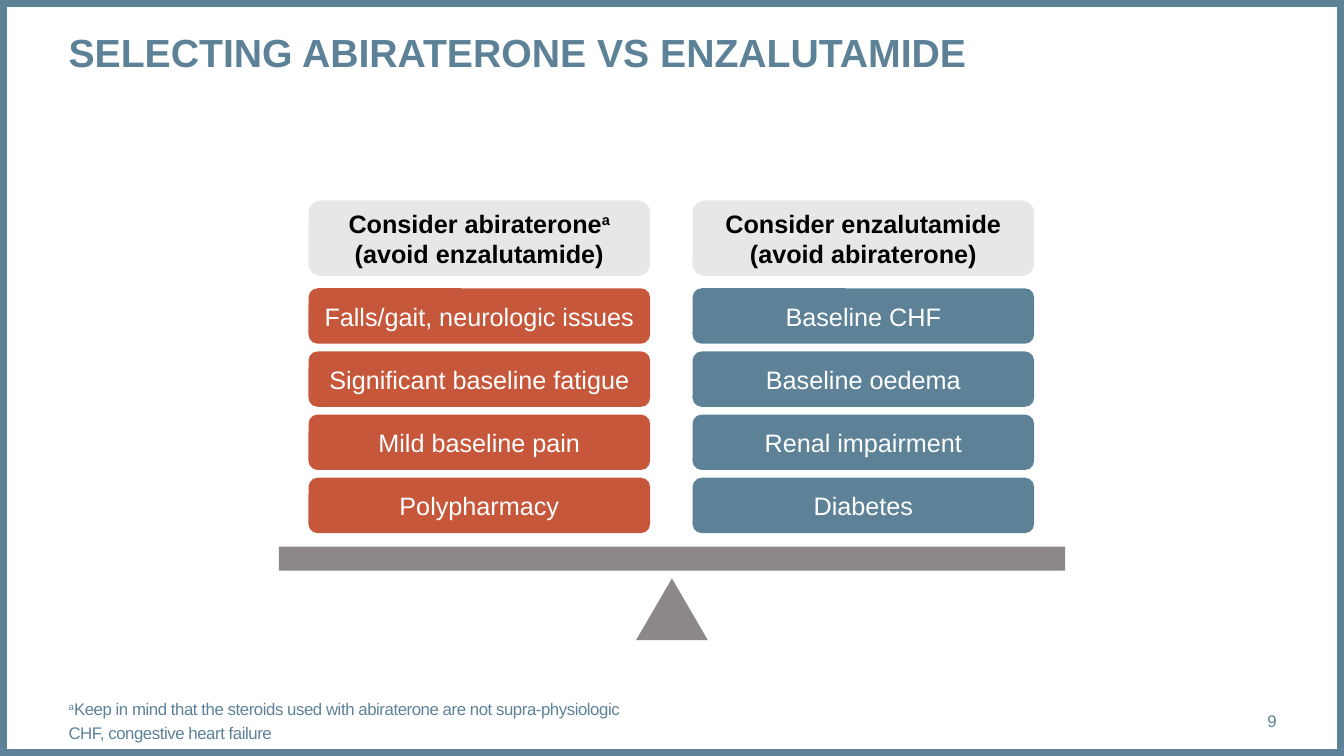
from pptx import Presentation
from pptx.dml.color import RGBColor
from pptx.enum.shapes import MSO_SHAPE as SHAPE
from pptx.enum.text import MSO_ANCHOR as ANCHOR, PP_ALIGN as ALIGN
from pptx.util import Pt

THEME = {
    "font": "Arial",
    "blue": RGBColor.from_string("5D8298"),
    "red": RGBColor.from_string("C6573B"),
    "grey": RGBColor.from_string("8B878B"),
    "pale": RGBColor.from_string("E8E7E8"),
    "white": RGBColor.from_string("FFFFFF"),
    "black": RGBColor.from_string("000000"),
    "title": 28,
    "body": 18,
    "small": 12,
}


def add_shape(kind, box, fill=None):
    sp = s.shapes.add_shape(kind, *map(Pt, box))
    sp.shadow.inherit = False
    sp.line.fill.background()
    if fill:
        sp.fill.solid()
        sp.fill.fore_color.rgb = THEME[fill]
    else:
        sp.fill.background()
    return sp


def write(sp, paragraphs, size, color, bold=False, align=ALIGN.LEFT,
          anchor=ANCHOR.MIDDLE, before=0, spacing=None):
    """Fill sp with text; ^ encloses a superscript and a newline breaks the line."""
    tf = sp.text_frame
    frame_format = {"word_wrap": True, "vertical_anchor": anchor, "margin_left": 0,
                    "margin_top": 0, "margin_right": 0, "margin_bottom": 0}
    for name, value in frame_format.items():
        setattr(tf, name, value)
    font_format = {"name": THEME["font"], "size": Pt(THEME[size]), "bold": bold}
    for i, text in enumerate(paragraphs):
        p = tf.add_paragraph() if i else tf.paragraphs[0]
        p.alignment = align
        p.space_before = Pt(before)
        for j, part in enumerate(text.split("^")):
            for k, line in enumerate(part.split("\n")):
                if k:
                    p.add_line_break()
                if not line:
                    continue
                r = p.add_run()
                r.text = line
                for name, value in font_format.items():
                    setattr(r.font, name, value)
                r.font.color.rgb = THEME[color]
                rPr = r._r.get_or_add_rPr()
                if j % 2:
                    rPr.set("baseline", "30000")
                if spacing:
                    rPr.set("spc", str(spacing))


prs = Presentation()
prs.slide_width, prs.slide_height = Pt(960), Pt(540)
s = prs.slides.add_slide(prs.slide_layouts[6])

# Frame, title and footer
frame = add_shape(SHAPE.RECTANGLE, (0, 0, 960, 540))
frame.line.color.rgb = THEME["blue"]
frame.line.width = Pt(10)

title = s.shapes.add_textbox(Pt(49), Pt(20), Pt(863), Pt(68))
write(title, ["SELECTING ABIRATERONE VS ENZALUTAMIDE"], "title", "blue",
      bold=True, anchor=ANCHOR.TOP)

footnote = s.shapes.add_textbox(Pt(49), Pt(500.4), Pt(801), Pt(29))
write(footnote, [
    "^a^Keep in mind that the steroids used with abiraterone are not supra-physiologic",
    "CHF, congestive heart failure",
], "small", "blue", before=3, spacing=-30)

number = s.shapes.add_textbox(Pt(828), Pt(500.4), Pt(84), Pt(29))
write(number, ["9"], "small", "blue", align=ALIGN.RIGHT)

# Balance: beam and pivot
add_shape(SHAPE.RECTANGLE, (199.2, 390.4, 561.6, 17.2), "grey")
add_shape(SHAPE.ISOSCELES_TRIANGLE, (454.4, 413.2, 51.2, 44), "grey")

# One column of reasons on each side of the balance
COLUMN_LEFT, COLUMN_PITCH, COLUMN_WIDTH = 220.4, 274.3, 244
HEADER_TOP, HEADER_HEIGHT = 143.2, 54
ROW_TOP, ROW_PITCH, ROW_HEIGHT = 205.9, 45.1, 39.6

columns = [
    ("Consider abiraterone^a^\n(avoid enzalutamide)", "red",
     ["Falls/gait, neurologic issues", "Significant baseline fatigue",
      "Mild baseline pain", "Polypharmacy"]),
    ("Consider enzalutamide\n(avoid abiraterone)", "blue",
     ["Baseline CHF", "Baseline oedema", "Renal impairment", "Diabetes"]),
]
for col, (heading, fill, reasons) in enumerate(columns):
    left = COLUMN_LEFT + col * COLUMN_PITCH
    header = add_shape(SHAPE.ROUNDED_RECTANGLE,
                       (left, HEADER_TOP, COLUMN_WIDTH, HEADER_HEIGHT), "pale")
    write(header, [heading], "body", "black", bold=True, align=ALIGN.CENTER)
    for row, reason in enumerate(reasons):
        top = ROW_TOP + row * ROW_PITCH
        card = add_shape(SHAPE.ROUNDED_RECTANGLE,
                         (left, top, COLUMN_WIDTH, ROW_HEIGHT), fill)
        write(card, [reason], "body", "white", align=ALIGN.CENTER)

prs.save("out.pptx")
